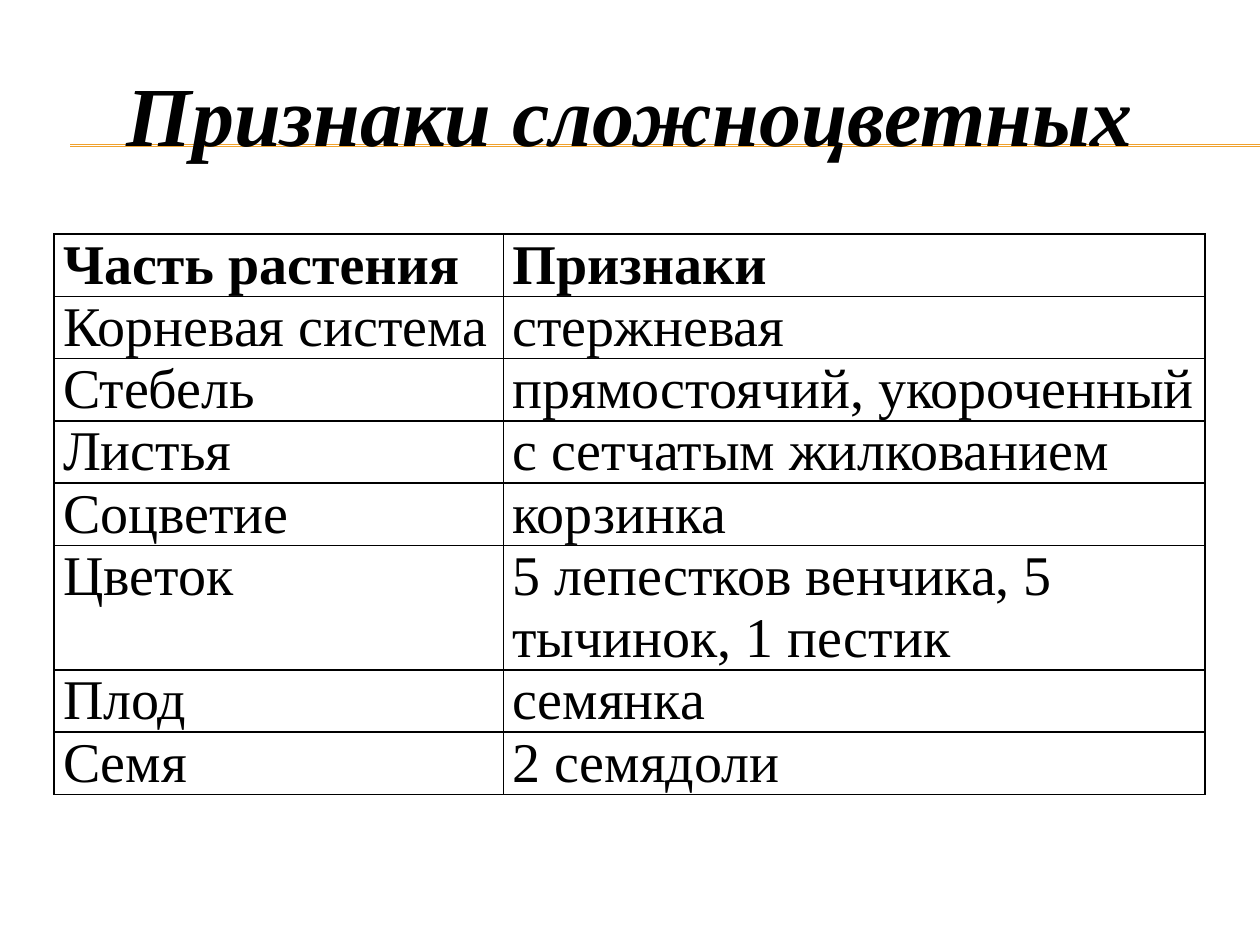
from pptx import Presentation
from pptx.dml.color import RGBColor
from pptx.enum.shapes import MSO_CONNECTOR
from pptx.enum.text import MSO_ANCHOR, MSO_AUTO_SIZE
from pptx.oxml.ns import qn
from pptx.util import Cm, Pt
from lxml.etree import SubElement

COLORS = {"text": "000000", "border": "000000", "rule": "F0A22E"}

PLANT_TRAITS = [
    ("Часть растения", "Признаки"),
    ("Корневая система", "стержневая"),
    ("Стебель", "прямостоячий, укороченный"),
    ("Листья", "с сетчатым жилкованием"),
    ("Соцветие", "корзинка"),
    ("Цветок", "5 лепестков венчика, 5 тычинок, 1 пестик"),
    ("Плод", "семянка"),
    ("Семя", "2 семядоли"),
]


class SlideBuilder:
    font = "Times New Roman"

    def __init__(self, slide):
        self.slide = slide

    def style(self, paragraph, size, bold=False, italic=False):
        for run in paragraph.runs:
            run.font.name = self.font
            run.font.size = Pt(size)
            run.font.bold = bold
            run.font.italic = italic
            run.font.color.rgb = RGBColor.from_string(COLORS["text"])

    def rule(self, left, right, y):
        rule = self.slide.shapes.add_connector(
            MSO_CONNECTOR.STRAIGHT, Cm(left), Cm(y), Cm(right), Cm(y))
        rule.line.color.rgb = RGBColor.from_string(COLORS["rule"])
        rule.line.width = Pt(0.75)
        SubElement(rule._element.spPr, qn("a:effectLst"))

    def title(self, text, left, top, width, height):
        heading = self.slide.shapes.add_textbox(Cm(left), Cm(top), Cm(width), Cm(height))
        frame = heading.text_frame
        frame.word_wrap = True
        frame.auto_size = MSO_AUTO_SIZE.SHAPE_TO_FIT_TEXT
        frame.vertical_anchor = MSO_ANCHOR.MIDDLE
        frame.text = text
        self.style(frame.paragraphs[0], 48, bold=True, italic=True)

    def border(self, cell):
        properties = cell._tc.get_or_add_tcPr()
        for position, side in enumerate(("lnL", "lnR", "lnT", "lnB")):
            line = SubElement(properties, qn(f"a:{side}"), w=str(Pt(1)))
            fill = SubElement(line, qn("a:solidFill"))
            SubElement(fill, qn("a:srgbClr"), val=COLORS["border"])
            properties.insert(position, line)

    def table(self, rows, left, top, column_widths, row_heights):
        traits = self.slide.shapes.add_table(
            len(rows), len(column_widths), Cm(left), Cm(top),
            Cm(sum(column_widths)), Cm(sum(row_heights))).table
        traits.horz_banding = False
        for column, width in zip(traits.columns, column_widths):
            column.width = Cm(width)
        for index, (texts, height) in enumerate(zip(rows, row_heights)):
            traits.rows[index].height = Cm(height)
            for cell, text in zip(traits.rows[index].cells, texts):
                cell.margin_left = cell.margin_right = Cm(0.18)
                cell.margin_top = cell.margin_bottom = 0
                cell.fill.background()
                self.border(cell)
                cell.text_frame.text = text
                self.style(cell.text_frame.paragraphs[0], 32, bold=index == 0)


def main():
    presentation = Presentation()
    presentation.slide_width = Cm(25.4)
    presentation.slide_height = Cm(19.05)
    builder = SlideBuilder(presentation.slides.add_slide(presentation.slide_layouts[6]))

    for y in (2.92, 2.95):
        builder.rule(1.42, 25.4, y)

    line_height = 1.25
    row_heights = [line_height * (2 if part == "Цветок" else 1) for part, _ in PLANT_TRAITS]
    builder.table(PLANT_TRAITS, 1.09, 4.72, (9.06, 14.14), row_heights)
    builder.title("Признаки сложноцветных", 2.31, 1.12, 21.44, 2.31)

    presentation.save("out.pptx")


if __name__ == "__main__":
    main()
